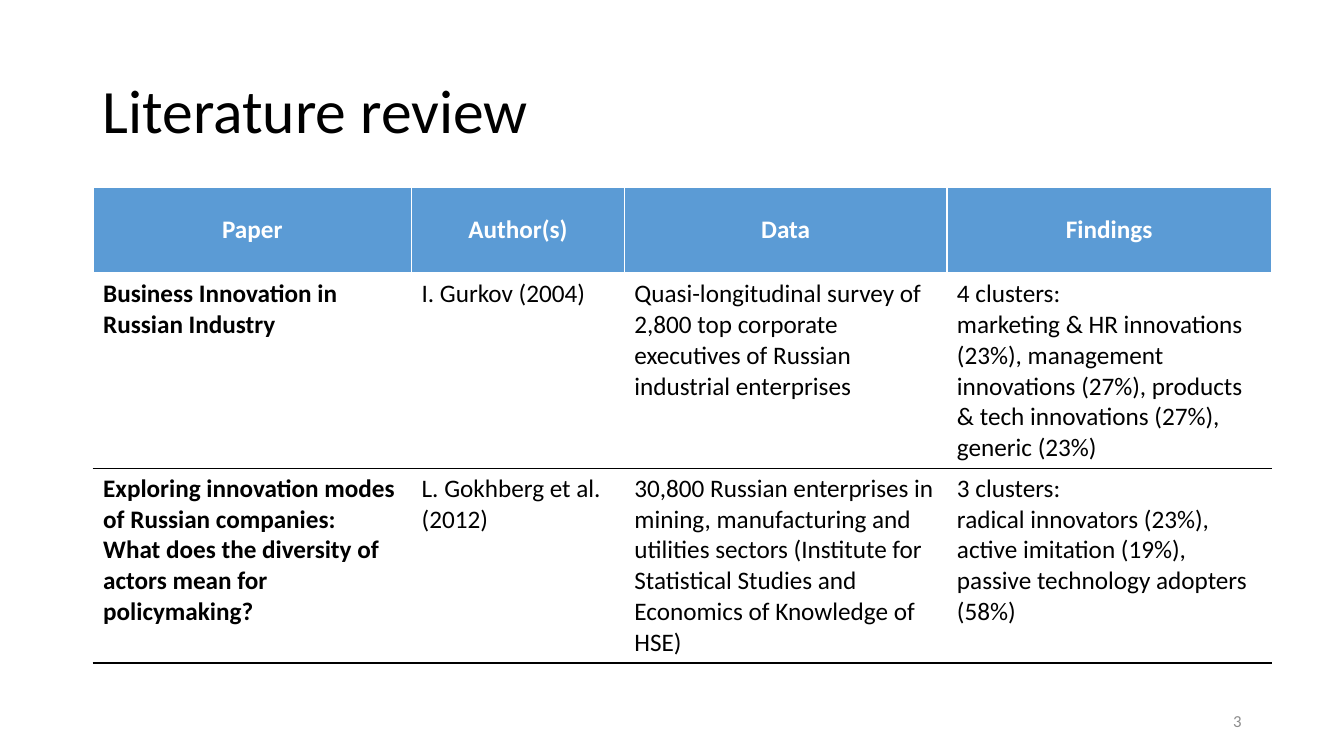
import pptx
import pptx.dml.color
import pptx.enum.text
import pptx.oxml
import pptx.oxml.ns
import pptx.util

Pt = pptx.util.Pt
ALIGN = pptx.enum.text.PP_ALIGN
ANCHOR = pptx.enum.text.MSO_ANCHOR
BLACK = pptx.dml.color.RGBColor(0x00, 0x00, 0x00)
WHITE = pptx.dml.color.RGBColor(0xFF, 0xFF, 0xFF)
BLUE = pptx.dml.color.RGBColor(0x5B, 0x9B, 0xD5)
GRAY = pptx.dml.color.RGBColor(0x8C, 0x8C, 0x8C)
FONT = "Calibri"

COLUMN_WIDTHS = (227.5, 152, 230.4, 231.8)
ROW_HEIGHTS = (62, 132, 132)
HEADERS = ("Paper", "Author(s)", "Data", "Findings")
STUDIES = (
    (
        "Business Innovation in Russian Industry",
        "I. Gurkov (2004)",
        "Quasi-longitudinal survey of 2,800 top corporate executives of Russian "
        "industrial enterprises",
        "4 clusters:\nmarketing & HR innovations (23%), management innovations (27%), "
        "products & tech innovations (27%), generic (23%)",
    ),
    (
        "Exploring innovation modes of Russian companies:\n"
        "What does the diversity of actors mean for policymaking?",
        "L. Gokhberg et al. (2012)",
        "30,800 Russian enterprises in mining, manufacturing and utilities sectors "
        "(Institute for Statistical Studies and Economics of Knowledge of HSE)",
        "3 clusters:\nradical innovators (23%), active imitation (19%), "
        "passive technology adopters (58%)",
    ),
)


def write_text(text_frame, text, size, color, bold=False, alignment=ALIGN.LEFT):
    text_frame.text = text
    text_frame.word_wrap = True
    for paragraph in text_frame.paragraphs:
        paragraph.alignment = alignment
        paragraph.font.name = FONT
        paragraph.font.size = Pt(size)
        paragraph.font.bold = bold
        paragraph.font.color.rgb = color


def place_title(slide, text):
    title = slide.shapes.title
    title.left, title.top, title.width, title.height = Pt(66), Pt(28.8), Pt(828), Pt(104.4)
    write_text(title.text_frame, text, 44, BLACK)
    title.text_frame.auto_size = pptx.enum.text.MSO_AUTO_SIZE.NONE
    title.text_frame.vertical_anchor = ANCHOR.MIDDLE
    title.text_frame.paragraphs[0].line_spacing = 0.9


def set_borders(cell, top, bottom, bottom_width=1):
    properties = cell._tc.get_or_add_tcPr()
    sides = (("L", WHITE, 1), ("R", WHITE, 1), ("T", top, 1), ("B", bottom, bottom_width))
    for side, color, width in sides:
        properties.append(pptx.oxml.parse_xml(
            f'<a:ln{side} {pptx.oxml.ns.nsdecls("a")} w="{Pt(width)}">'
            f'<a:solidFill><a:srgbClr val="{color}"/></a:solidFill></a:ln{side}>'
        ))


def format_header(cell, text):
    set_borders(cell, WHITE, WHITE, 3)
    cell.fill.solid()
    cell.fill.fore_color.rgb = BLUE
    cell.vertical_anchor = ANCHOR.MIDDLE
    write_text(cell.text_frame, text, 18, WHITE, True, ALIGN.CENTER)


def format_body(cell, text, top, bold):
    set_borders(cell, top, BLACK)
    cell.fill.background()
    write_text(cell.text_frame, text, 18, BLACK, bold)


def add_study_table(slide):
    table = slide.shapes.add_table(
        len(ROW_HEIGHTS), len(COLUMN_WIDTHS), Pt(66.5), Pt(133.5),
        Pt(sum(COLUMN_WIDTHS)), Pt(sum(ROW_HEIGHTS)),
    ).table
    table.horz_banding = False
    for column, width in zip(table.columns, COLUMN_WIDTHS):
        column.width = Pt(width)
    for row, height in zip(table.rows, ROW_HEIGHTS):
        row.height = Pt(height)
    for column_index, header in enumerate(HEADERS):
        format_header(table.cell(0, column_index), header)
    for row_index, study in enumerate(STUDIES, 1):
        top = WHITE if row_index == 1 else BLACK
        for column_index, text in enumerate(study):
            format_body(table.cell(row_index, column_index), text, top, column_index == 0)


def add_page_number(slide, number):
    box = slide.shapes.add_textbox(Pt(678), Pt(500.5), Pt(216), Pt(28.75))
    write_text(box.text_frame, number, 12, GRAY, alignment=ALIGN.RIGHT)
    box.text_frame.vertical_anchor = ANCHOR.MIDDLE


def main():
    presentation = pptx.Presentation()
    presentation.slide_width = Pt(960)
    presentation.slide_height = Pt(540)
    slide = presentation.slides.add_slide(presentation.slide_layouts[5])
    place_title(slide, "Literature review")
    add_study_table(slide)
    add_page_number(slide, "3")
    presentation.save("out.pptx")


if __name__ == "__main__":
    main()
